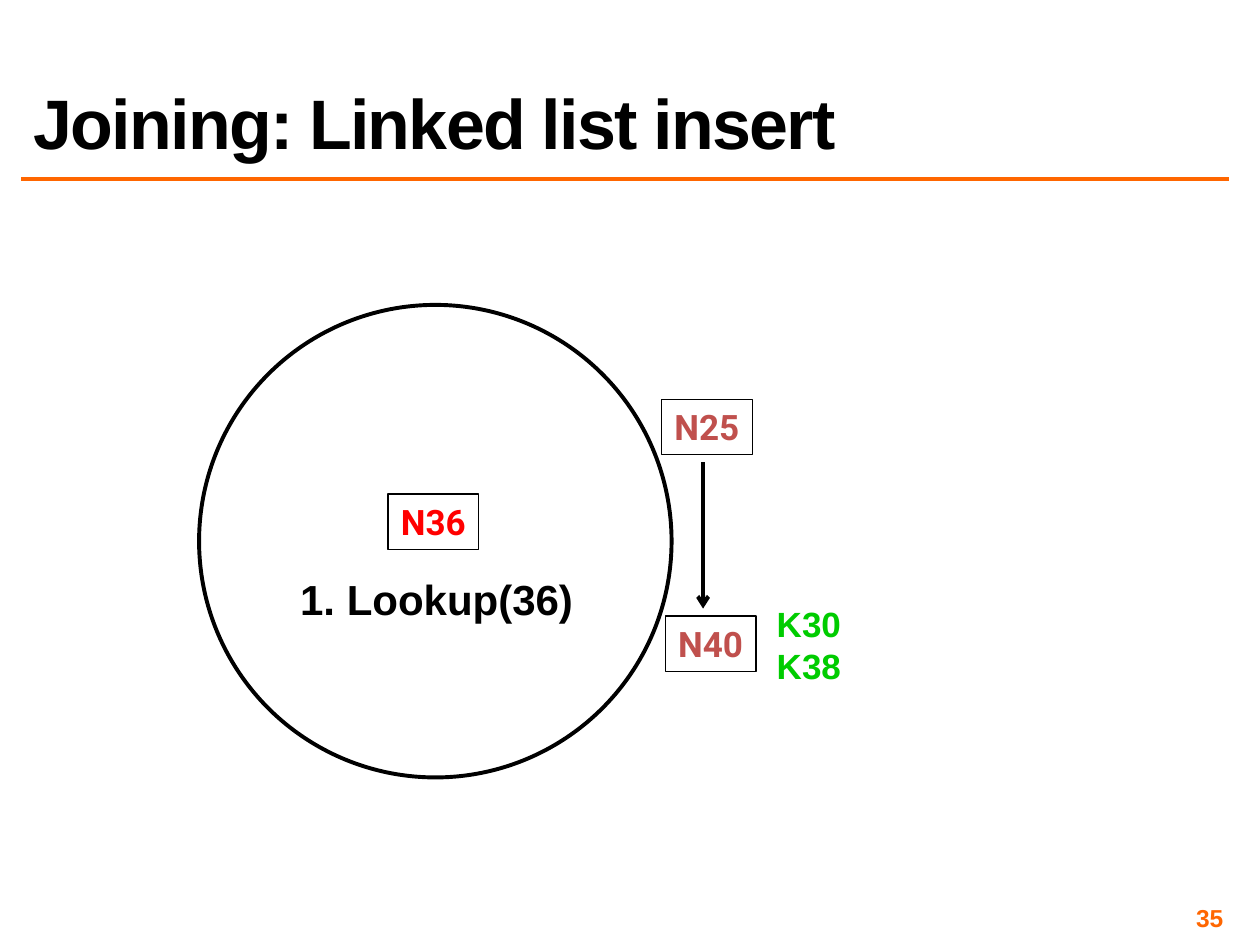
from lxml import etree
from pptx import Presentation
from pptx.dml.color import RGBColor
from pptx.enum.shapes import MSO_CONNECTOR, MSO_SHAPE
from pptx.enum.text import MSO_ANCHOR, PP_ALIGN
from pptx.oxml.ns import qn
from pptx.util import Inches, Pt

LEFT, CENTER, RIGHT = PP_ALIGN.LEFT, PP_ALIGN.CENTER, PP_ALIGN.RIGHT
TOP, MIDDLE, BOTTOM = MSO_ANCHOR.TOP, MSO_ANCHOR.MIDDLE, MSO_ANCHOR.BOTTOM
COLORS = {"black": "000000", "orange": "FF6600", "red": "FF0000",
          "brick": "C0504D", "green": "00CC00"}


def rgb(name):
    return RGBColor.from_string(COLORS[name])


def write(sp, text, size=20, font="Arial", color="black", align=CENTER,
          anchor=TOP, wrap=False, margin=None, line_spacing=None, tracking=None):
    """Fill a shape with bold text, one paragraph per line; tracking is in points."""
    tf = sp.text_frame
    tf.word_wrap = wrap
    tf.vertical_anchor = anchor
    if margin is not None:
        tf.margin_left = tf.margin_right = tf.margin_top = tf.margin_bottom = Inches(margin)
    for i, line in enumerate(text.split("\n")):
        p = tf.paragraphs[0] if i == 0 else tf.add_paragraph()
        p.alignment = align
        if line_spacing:
            p.line_spacing = line_spacing
        r = p.add_run()
        r.text = line
        r.font.size = Pt(size)
        r.font.name = font
        r.font.bold = True
        r.font.color.rgb = rgb(color)
        if tracking:
            r.font._element.set("spc", str(tracking * 100))


prs = Presentation()
prs.slide_width, prs.slide_height = Inches(10), Inches(7.5)
s = prs.slides.add_slide(prs.slide_layouts[6])

# Title rule and successor arrow
connectors = []
for x1, y1, x2, y2, color, width in [
    (0.17, 1.42, 9.75, 1.42, "orange", 2),
    (5.58, 3.67, 5.58, 4.83, "black", 2.25),
]:
    c = s.shapes.add_connector(MSO_CONNECTOR.STRAIGHT, Inches(x1), Inches(y1),
                               Inches(x2), Inches(y2))
    c.line.color.rgb = rgb(color)
    c.line.width = Pt(width)
    etree.SubElement(c._element.spPr, qn("a:effectLst"))
    connectors.append(c)
arrow = connectors[1]
etree.SubElement(arrow.line._get_or_add_ln(), qn("a:tailEnd"), type="arrow")

# Ring and its nodes
for x, y, w, h, shape, width, text, color in [
    (1.58, 2.42, 3.75, 3.75, MSO_SHAPE.OVAL, 2.25, None, None),
    (3.08, 3.92, 0.72, 0.44, MSO_SHAPE.RECTANGLE, 0.75, "N36", "red"),
    (5.28, 4.89, 0.72, 0.44, MSO_SHAPE.RECTANGLE, 0.75, "N40", "brick"),
    (5.25, 3.17, 0.72, 0.44, MSO_SHAPE.RECTANGLE, 0.75, "N25", "brick"),
]:
    sp = s.shapes.add_shape(shape, Inches(x), Inches(y), Inches(w), Inches(h))
    sp.shadow.inherit = False
    sp.fill.background()
    sp.line.color.rgb = rgb("black")
    sp.line.width = Pt(width)
    if text:
        write(sp, text, font="Roboto", color=color)

# Title, step, keys and page number
for x, y, w, h, text, style in [
    (0.17, 0.17, 9.58, 1.17, "Joining: Linked list insert",
     dict(size=40, align=LEFT, anchor=BOTTOM, wrap=True, line_spacing=0.8, tracking=-1)),
    (2.27, 4.5, 2.39, 0.5, "1. Lookup(36)", dict(size=24)),
    (6.06, 4.73, 0.72, 0.77, "K30\nK38", dict(color="green")),
    (7.42, 7.17, 2.33, 0.23, "35",
     dict(size=14, color="orange", align=RIGHT, anchor=MIDDLE, wrap=True, margin=0.04)),
]:
    write(s.shapes.add_textbox(Inches(x), Inches(y), Inches(w), Inches(h)), text, **style)

prs.save("out.pptx")
